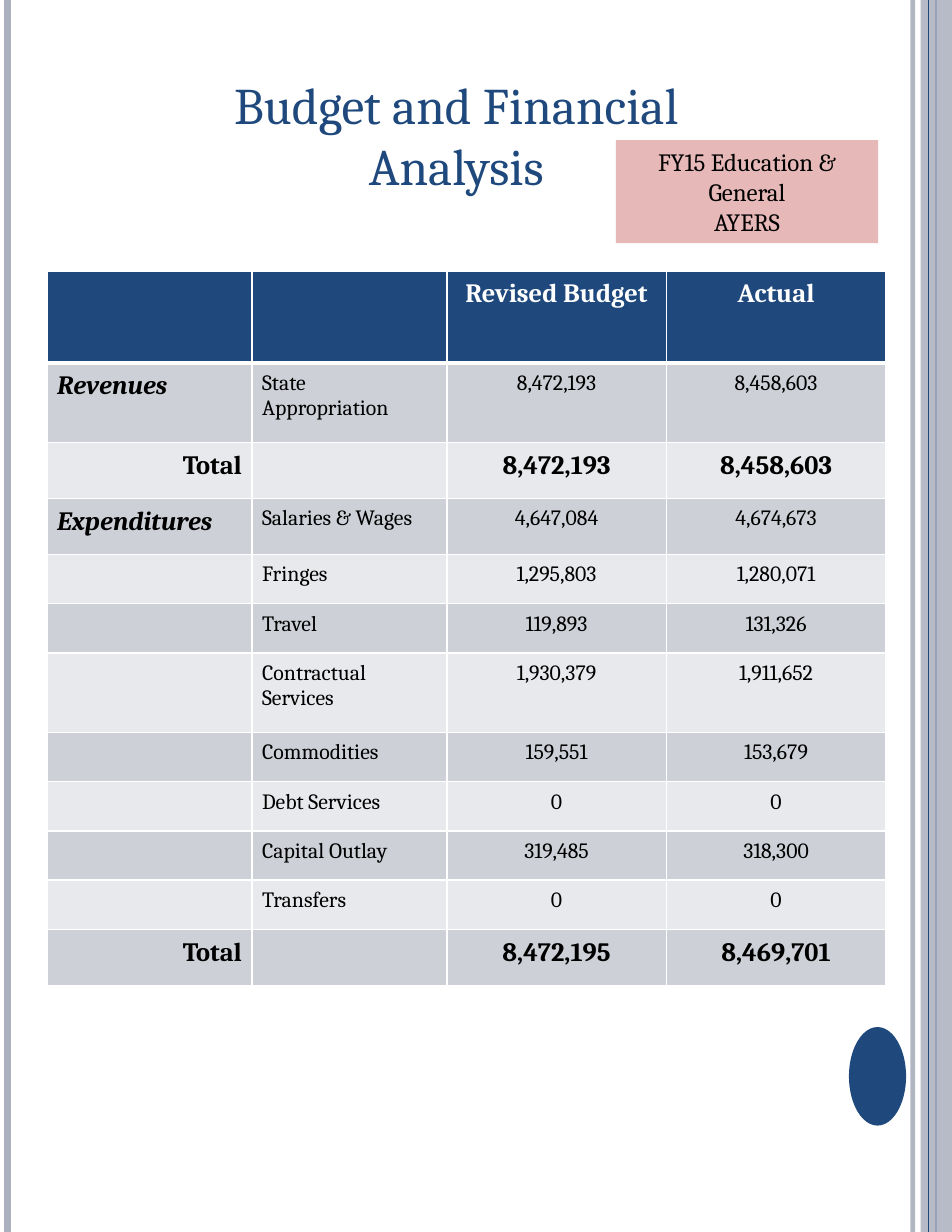
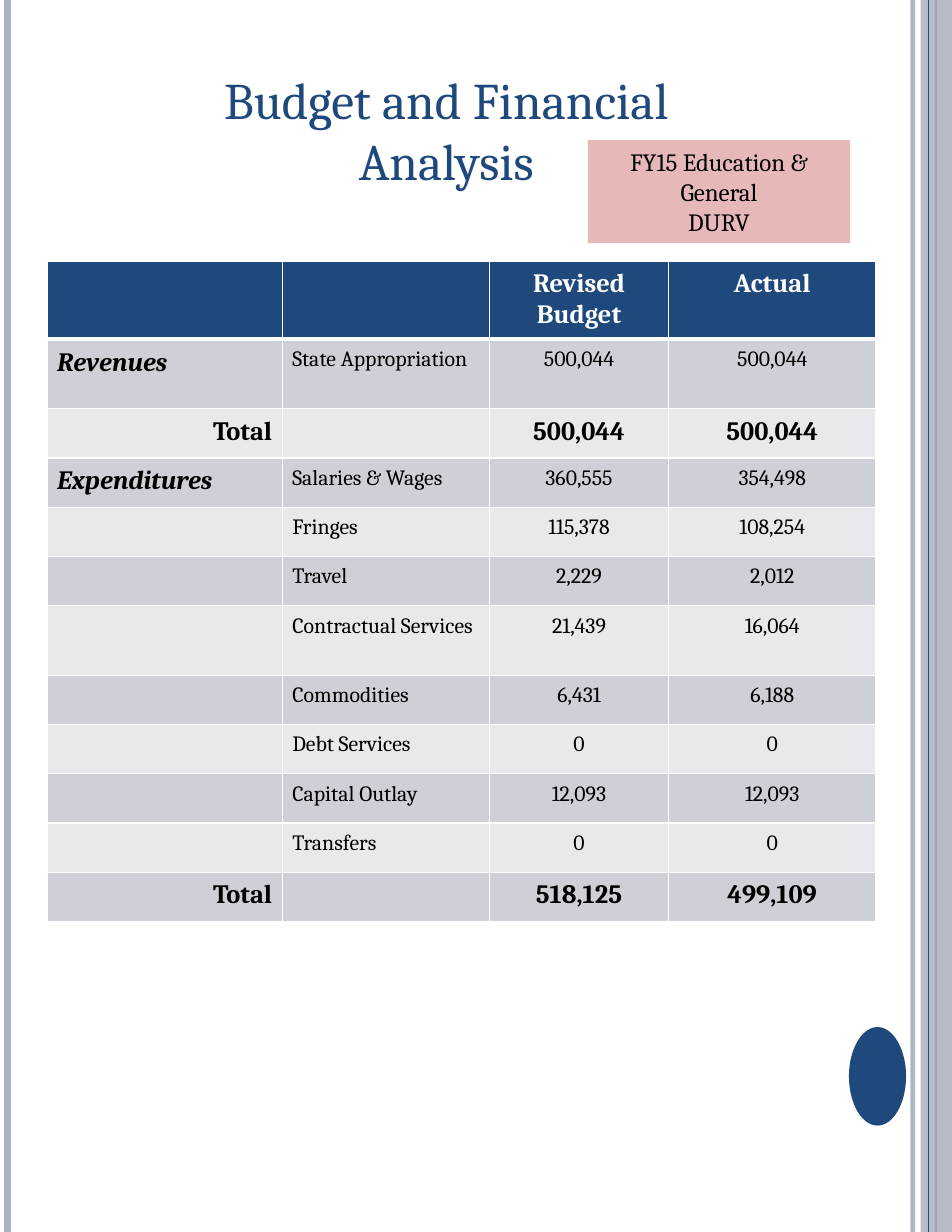
from lxml.etree import SubElement
from pptx import Presentation
from pptx.dml.color import RGBColor
from pptx.enum.shapes import MSO_CONNECTOR, MSO_SHAPE
from pptx.enum.text import MSO_ANCHOR, MSO_AUTO_SIZE, PP_ALIGN
from pptx.oxml.ns import qn
from pptx.util import Inches, Pt

FONT = "Cambria"
NAVY, GRAY, PINK = "1F497D", "ACB1BF", "E6B9B8"
WHITE, BLACK = "FFFFFF", "000000"
ROW_BANDS = ("CDD0D7", "E8E9EC")
PAGE_WIDTH, PAGE_HEIGHT = 8.5, 11

TITLE = "Budget and Financial Analysis"
CALLOUT_HEADING = "FY15 Education & General"
HEADER = ("", "", "Revised Budget", "Actual")
ROW_LABELS = [
    ("Revenues", "State Appropriation"),
    ("Total", ""),
    ("Expenditures", "Salaries & Wages"),
    ("", "Fringes"),
    ("", "Travel"),
    ("", "Contractual Services"),
    ("", "Commodities"),
    ("", "Debt Services"),
    ("", "Capital Outlay"),
    ("", "Transfers"),
    ("Total", ""),
]
BUDGETS = [
    {
        "unit": "AYERS",
        "title_box": (1.42, 0.67, 5.31, 1.06),
        "callout_left": 5.5,
        "table_top": 2.42,
        "columns": (1.83, 1.74, 1.96, 1.96),
        "rows": (0.82, 0.71, 0.5, 0.5, 0.44, 0.44, 0.71, 0.44, 0.44, 0.44, 0.44, 0.5),
        "amounts": [
            ("8,472,193", "8,458,603"),
            ("8,472,193", "8,458,603"),
            ("4,647,084", "4,674,673"),
            ("1,295,803", "1,280,071"),
            ("119,893", "131,326"),
            ("1,930,379", "1,911,652"),
            ("159,551", "153,679"),
            ("0", "0"),
            ("319,485", "318,300"),
            ("0", "0"),
            ("8,472,195", "8,469,701"),
        ],
    },
    {
        "unit": "DURV",
        "title_box": (1.33, 0.67, 5.31, 0.97),
        "callout_left": 5.25,
        "table_top": 2.33,
        "columns": (2.1, 1.85, 1.6, 1.85),
        "rows": (0.7, 0.62, 0.44, 0.44, 0.44, 0.44, 0.62, 0.44, 0.44, 0.44, 0.44, 0.44),
        "amounts": [
            ("500,044", "500,044"),
            ("500,044", "500,044"),
            ("360,555", "354,498"),
            ("115,378", "108,254"),
            ("2,229", "2,012"),
            ("21,439", "16,064"),
            ("6,431", "6,188"),
            ("0", "0"),
            ("12,093", "12,093"),
            ("0", "0"),
            ("518,125", "499,109"),
        ],
    },
]


def paint(fill, color, opacity=100):
    fill.solid()
    fill.fore_color.rgb = RGBColor.from_string(color)
    if opacity < 100:
        solid = fill._xPr.find(qn("a:solidFill"))
        SubElement(solid[0], qn("a:alpha"), val=str(opacity * 1000))


def style_paragraph(paragraph, size, color, align, bold=False, italic=False):
    paragraph.alignment = align
    font = paragraph.font
    font.name, font.size = FONT, Pt(size)
    font.bold, font.italic = bold, italic
    font.color.rgb = RGBColor.from_string(color)


def add_block(slide, preset, box, color, opacity=100):
    shape = slide.shapes.add_shape(preset, *map(Inches, box))
    shape.shadow.inherit = False
    shape.line.fill.background()
    paint(shape.fill, color, opacity)
    return shape


def add_stripe(slide, x, color, width, opacity=100):
    stripe = slide.shapes.add_connector(
        MSO_CONNECTOR.STRAIGHT, Inches(x), 0, Inches(x), Inches(PAGE_HEIGHT))
    stripe.line.width = Pt(width)
    paint(stripe.line.fill, color, opacity)
    SubElement(stripe._element.spPr, qn("a:effectLst"))


def add_page_frame(slide):
    add_stripe(slide, 8.15, GRAY, 3, 93)
    add_stripe(slide, 0.07, GRAY, 4.5)
    add_stripe(slide, 8.36, NAVY, 1.5)
    add_block(slide, MSO_SHAPE.RECTANGLE, (8.22, 0, 0.28, PAGE_HEIGHT), GRAY, 87)
    add_stripe(slide, 8.29, NAVY, 0.75)
    add_block(slide, MSO_SHAPE.OVAL, (7.58, 9.17, 0.51, 0.88), NAVY)


def set_margins(target, horizontal, vertical):
    target.margin_left = target.margin_right = Inches(horizontal)
    target.margin_top = target.margin_bottom = Inches(vertical)


def place_title(slide, box):
    title = slide.shapes.title
    title.left, title.top, title.width, title.height = map(Inches, box)
    frame = title.text_frame
    frame.text = TITLE
    frame.word_wrap = True
    frame.auto_size = MSO_AUTO_SIZE.NONE
    frame.vertical_anchor = MSO_ANCHOR.MIDDLE
    set_margins(frame, 0.11, 0.06)
    style_paragraph(frame.paragraphs[0], 33, NAVY, PP_ALIGN.CENTER)


def add_callout(slide, left, unit):
    callout = add_block(slide, MSO_SHAPE.RECTANGLE, (left, 1.25, 2.34, 0.92), PINK)
    frame = callout.text_frame
    frame.text = f"{CALLOUT_HEADING}\n{unit}"
    frame.word_wrap = True
    frame.vertical_anchor = MSO_ANCHOR.TOP
    set_margins(frame, 0.11, 0.06)
    for paragraph in frame.paragraphs:
        style_paragraph(paragraph, 16, BLACK, PP_ALIGN.CENTER)


def add_borders(cell, bottom_width):
    properties = cell._tc.get_or_add_tcPr()
    for side, width in (("L", 1), ("R", 1), ("T", 1), ("B", bottom_width)):
        border = SubElement(properties, qn(f"a:ln{side}"), w=str(Pt(width)))
        SubElement(SubElement(border, qn("a:solidFill")), qn("a:srgbClr"), val=WHITE)


def fill_cell(cell, text, row, column, is_total):
    is_header = row == 0
    strong = is_header or is_total or column == 0
    if column >= 2:
        align = PP_ALIGN.CENTER
    elif column == 0 and is_total:
        align = PP_ALIGN.RIGHT
    else:
        align = PP_ALIGN.LEFT
    cell.text = text
    set_margins(cell, 0.09, 0.07)
    style_paragraph(
        cell.text_frame.paragraphs[0], 17 if strong else 14,
        WHITE if is_header else BLACK, align,
        bold=strong, italic=column == 0 and not is_header and not is_total)
    add_borders(cell, 3 if is_header else 1)
    paint(cell.fill, NAVY if is_header else ROW_BANDS[(row - 1) % 2])


def add_budget_table(slide, budget):
    body = [labels + amounts for labels, amounts in zip(ROW_LABELS, budget["amounts"])]
    content = [HEADER] + body
    columns, rows = budget["columns"], budget["rows"]
    table = slide.shapes.add_table(
        len(rows), len(columns), Inches(0.42), Inches(budget["table_top"]),
        Inches(sum(columns)), Inches(sum(rows))).table
    table.first_row = table.horz_banding = False
    for column, width in zip(table.columns, columns):
        column.width = Inches(width)
    for row, height in zip(table.rows, rows):
        row.height = Inches(height)
    for row, texts in enumerate(content):
        for column, text in enumerate(texts):
            fill_cell(table.cell(row, column), text, row, column, texts[0] == "Total")


def main():
    presentation = Presentation()
    presentation.slide_width = Inches(PAGE_WIDTH)
    presentation.slide_height = Inches(PAGE_HEIGHT)
    title_only = presentation.slide_layouts[5]
    for budget in BUDGETS:
        slide = presentation.slides.add_slide(title_only)
        add_page_frame(slide)
        place_title(slide, budget["title_box"])
        add_budget_table(slide, budget)
        add_callout(slide, budget["callout_left"], budget["unit"])
    presentation.save("out.pptx")


if __name__ == "__main__":
    main()
